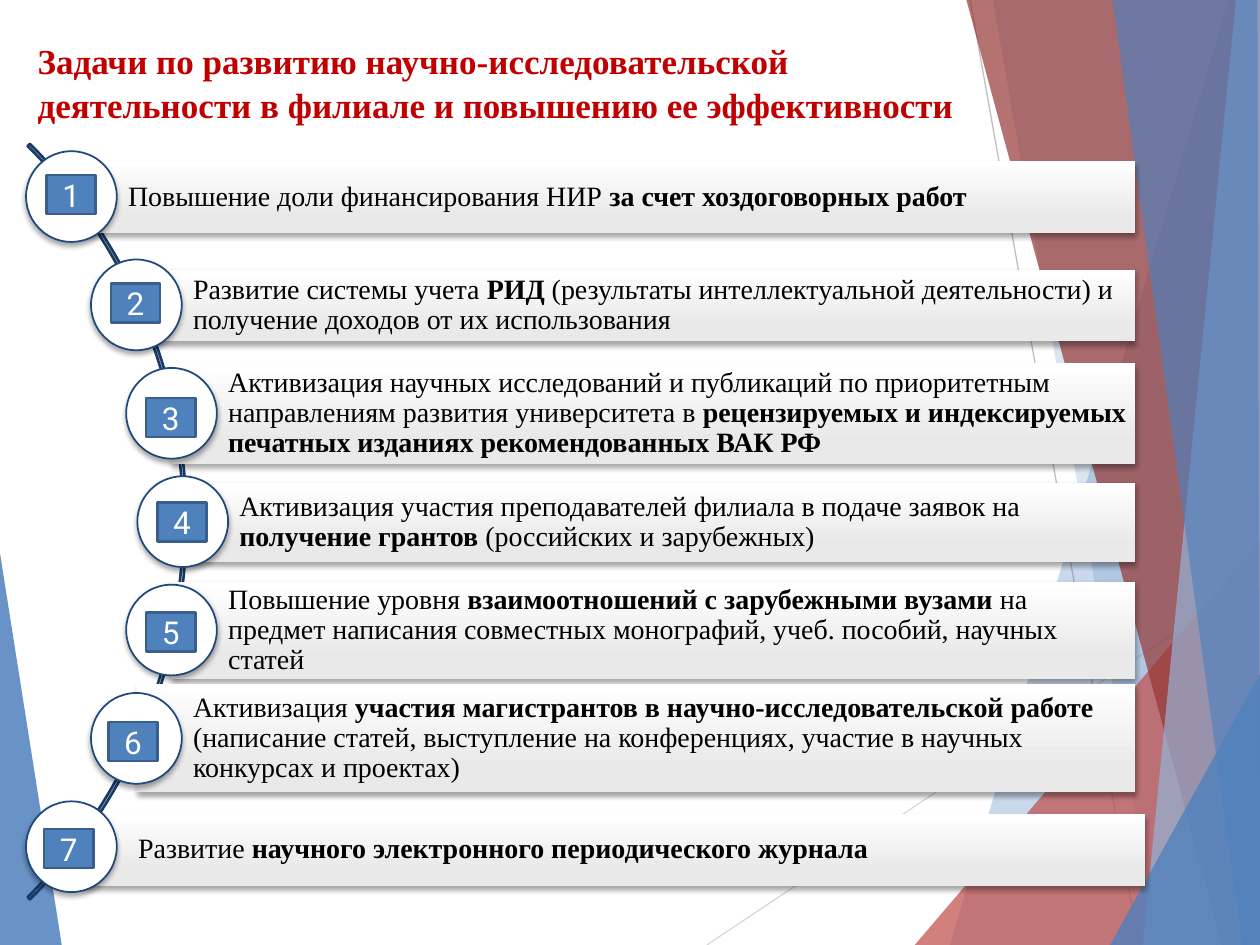
import math
import pptx
import pptx.dml.color
import pptx.enum.dml
import pptx.enum.shapes
import pptx.enum.text
import pptx.oxml
import pptx.oxml.ns
import pptx.util
from lxml import etree

WIDTH, HEIGHT = 10, 7.5
SERIF, SANS = "Times New Roman", "Roboto"
Shape = pptx.enum.shapes.MSO_SHAPE
Anchor = pptx.enum.text.MSO_ANCHOR
Align = pptx.enum.text.PP_ALIGN

# Content
TITLE = ("Задачи по развитию научно-исследовательской деятельности "
         "в филиале и повышению ее эффективности")

# Bar top, bar height, badge left, badge top, text spans (every second one is bold)
TASKS = [
    (1.28, 0.57, 0.37, 1.39, ["Повышение доли финансирования НИР ", "за счет хоздоговорных работ"]),
    (2.14, 0.57, 0.88, 2.25, ["Развитие системы учета ", "РИД",
     " (результаты интеллектуальной деятельности) и получение доходов от их использования"]),
    (2.88, 0.80, 1.16, 3.16, [
     "Активизация научных исследований и публикаций по приоритетным направлениям "
     "развития университета в ",
     "рецензируемых и индексируемых печатных изданиях рекомендованных ВАК РФ"]),
    (3.83, 0.63, 1.25, 3.99, ["Активизация участия преподавателей филиала в подаче заявок на ",
     "получение грантов ", "(российских и зарубежных)"]),
    (4.62, 0.77, 1.16, 4.86, ["Повышение уровня ", "взаимоотношений с зарубежными вузами ",
     "на предмет написания совместных монографий, учеб. пособий, научных статей"]),
    (5.43, 0.86, 0.86, 5.73, ["Активизация ",
     "участия магистрантов в научно-исследовательской работе ",
     "(написание статей, выступление на конференциях, участие в научных конкурсах и проектах)"]),
    (6.46, 0.57, 0.35, 6.58, ["Развитие ", "научного электронного периодического журнала"]),
]

# Background facets: colour, opacity in percent, corners
LEFT_FACET = ("4F81BD", 85, [(0, 4.39), (0.49, 7.5), (0, 7.5)])
RAYS = [("D9D9D9", (5.61, 7.5), (10, 4.57)), ("BFBFBF", (7.7, 0), (9.04, 7.5))]
RIGHT_FACETS = [
    ("4F81BD", 30, [(9.75, 0), (7.54, 7.5), (10, 7.5), (10, 0)]),
    ("4F81BD", 20, [(7.88, 0), (9.19, 7.5), (10, 7.5), (10, 0)]),
    ("C0504D", 72, [(7.26, 7.5), (10, 4.29), (10, 7.5)]),
    ("953735", 70, [(7.67, 0), (9.7, 7.5), (10, 7.5), (10, 0)]),
    ("95B3D7", 70, [(9.81, 0), (9.07, 7.5), (10, 7.5), (10, 0)]),
    ("4F81BD", 65, [(8.83, 0), (9.86, 7.5), (10, 7.5), (9.98, 0)]),
    ("4F81BD", 80, [(8.81, 7.5), (10, 5.35), (10, 7.5)]),
]

# Circles sit on an arc at equal vertical steps
ARC_X, ARC_Y, ARC_RADIUS, TRACK_RADIUS = -2.76, 4.14, 4.24, 4.21
STEP, CIRCLE, BAR_RIGHT = 0.86, 0.72, 9.01
LAST_SHIFT = 0.08
BADGE = (0.39, 0.31)

inch = pptx.util.Inches


def rgb(value):
    return pptx.dml.color.RGBColor.from_string(value)


def add_child(parent, tag, **values):
    child = etree.SubElement(parent, pptx.oxml.ns.qn(tag))
    for name, value in values.items():
        child.set(name, str(value))
    return child


def set_line(shape, color, width):
    shape.line.color.rgb = rgb(color)
    shape.line.width = pptx.util.Pt(width)


def add_facet(page, color, opacity, corners):
    points = [(inch(x), inch(y)) for x, y in corners]
    builder = page.shapes.build_freeform(*points[0])
    builder.add_line_segments(points[1:], close=True)
    facet = builder.convert_to_shape()
    facet.shadow.inherit = False
    facet.fill.solid()
    facet.fill.fore_color.rgb = rgb(color)
    facet.line.fill.background()
    tint = facet._element.spPr.find(".//" + pptx.oxml.ns.qn("a:srgbClr"))
    add_child(tint, "a:alpha", val=opacity * 1000)


def add_ray(page, color, start, end):
    ray = page.shapes.add_connector(pptx.enum.shapes.MSO_CONNECTOR.STRAIGHT,
                                    *(inch(v) for v in start + end))
    set_line(ray, color, 0.75)
    add_child(ray._element.spPr, "a:effectLst")


def add_box(page, kind, place, fill=None, line=None):
    box = page.shapes.add_shape(kind, *(inch(v) for v in place))
    box.shadow.inherit = False
    if fill:
        box.fill.solid()
        box.fill.fore_color.rgb = rgb(fill)
    else:
        box.fill.background()
    if line:
        set_line(box, *line)
    else:
        box.line.fill.background()
    return box


def add_shadow(shape):
    effects = shape._element.spPr.find(pptx.oxml.ns.qn("a:effectLst"))
    shadow = add_child(effects, "a:outerShdw", blurRad=pptx.util.Pt(3), dist=pptx.util.Pt(2),
                       dir=90 * 60000, rotWithShape=0)
    add_child(add_child(shadow, "a:srgbClr", val="000000"), "a:alpha", val=35000)


def write(box, spans, font, color, insets, anchor=Anchor.MIDDLE, align=Align.LEFT, spacing=1.0):
    """Write (text, bold) spans as one paragraph; font is (name, size)."""
    frame = box.text_frame
    sides = ("margin_left", "margin_top", "margin_right", "margin_bottom")
    layout = {"word_wrap": True, "vertical_anchor": anchor,
              **{side: inch(v) for side, v in zip(sides, insets)}}
    for name, value in layout.items():
        setattr(frame, name, value)
    para = frame.paragraphs[0]
    para.alignment, para.line_spacing = align, spacing
    for text, bold in spans:
        span = para.add_run()
        span.text = text
        for name, value in {"name": font[0], "size": pptx.util.Pt(font[1]), "bold": bold}.items():
            setattr(span.font, name, value)
        span.font.color.rgb = rgb(color)


def add_bar(page, place, texts):
    bar = add_box(page, Shape.RECTANGLE, place)
    bar.fill.gradient()
    bar.fill.gradient_angle = 270
    for stop, (position, color) in zip(bar.fill.gradient_stops, [(0, "FFFFFF"), (0.78, "E9E9E9")]):
        stop.position = position
        stop.color.rgb = rgb(color)
    add_shadow(bar)
    spans = [(text, index % 2 == 1) for index, text in enumerate(texts)]
    write(bar, spans, (SERIF, 16), "000000", (0.45, 0.04, 0.04, 0.04), spacing=0.9)


def main():
    deck = pptx.Presentation()
    deck.slide_width, deck.slide_height = inch(WIDTH), inch(HEIGHT)
    page = deck.slides.add_slide(deck.slide_layouts[6])

    # Background
    add_facet(page, *LEFT_FACET)
    for ray in RAYS:
        add_ray(page, *ray)
    for facet in RIGHT_FACETS:
        add_facet(page, *facet)

    # Title
    title = page.shapes.add_textbox(*(inch(v) for v in (0.2, 0.22, 7.68, 0.94)))
    write(title, [(TITLE, True)], (SERIF, 20), "C00000", (0.1, 0.08, 0.1, 0.05),
          anchor=Anchor.TOP, spacing=1.04)

    # Arc
    arc = add_box(page, Shape.BLOCK_ARC,
                  (ARC_X - ARC_RADIUS, ARC_Y - ARC_RADIUS, 2 * ARC_RADIUS, 2 * ARC_RADIUS),
                  line=("193A64", 1.5))
    for index, value in enumerate((189, 27, 0.003)):
        arc.adjustments[index] = value

    # Bars with their circles
    last = len(TASKS) - 1
    for index, (top, height, _, _, texts) in enumerate(TASKS):
        rise = (index - last / 2) * STEP
        center_x = ARC_X + math.sqrt(TRACK_RADIUS ** 2 - rise ** 2)
        shift = LAST_SHIFT if index == last else 0
        add_bar(page, (center_x + shift, top, BAR_RIGHT - center_x, height), texts)
        circle = add_box(page, Shape.OVAL, (center_x - CIRCLE / 2, ARC_Y + rise - CIRCLE / 2,
                                            CIRCLE, CIRCLE), "FFFFFF", ("1F497D", 1))
        add_shadow(circle)

    # Number badges
    for number, (_, _, left, top, _) in enumerate(TASKS, 1):
        badge = add_box(page, Shape.RECTANGLE, (left, top, *BADGE), "4F81BD", ("3A5F8C", 1.5))
        write(badge, [(str(number), False)], (SANS, 18), "FFFFFF", (0.1, 0.05, 0.1, 0.05),
              align=Align.CENTER)

    deck.save("out.pptx")


if __name__ == "__main__":
    main()
